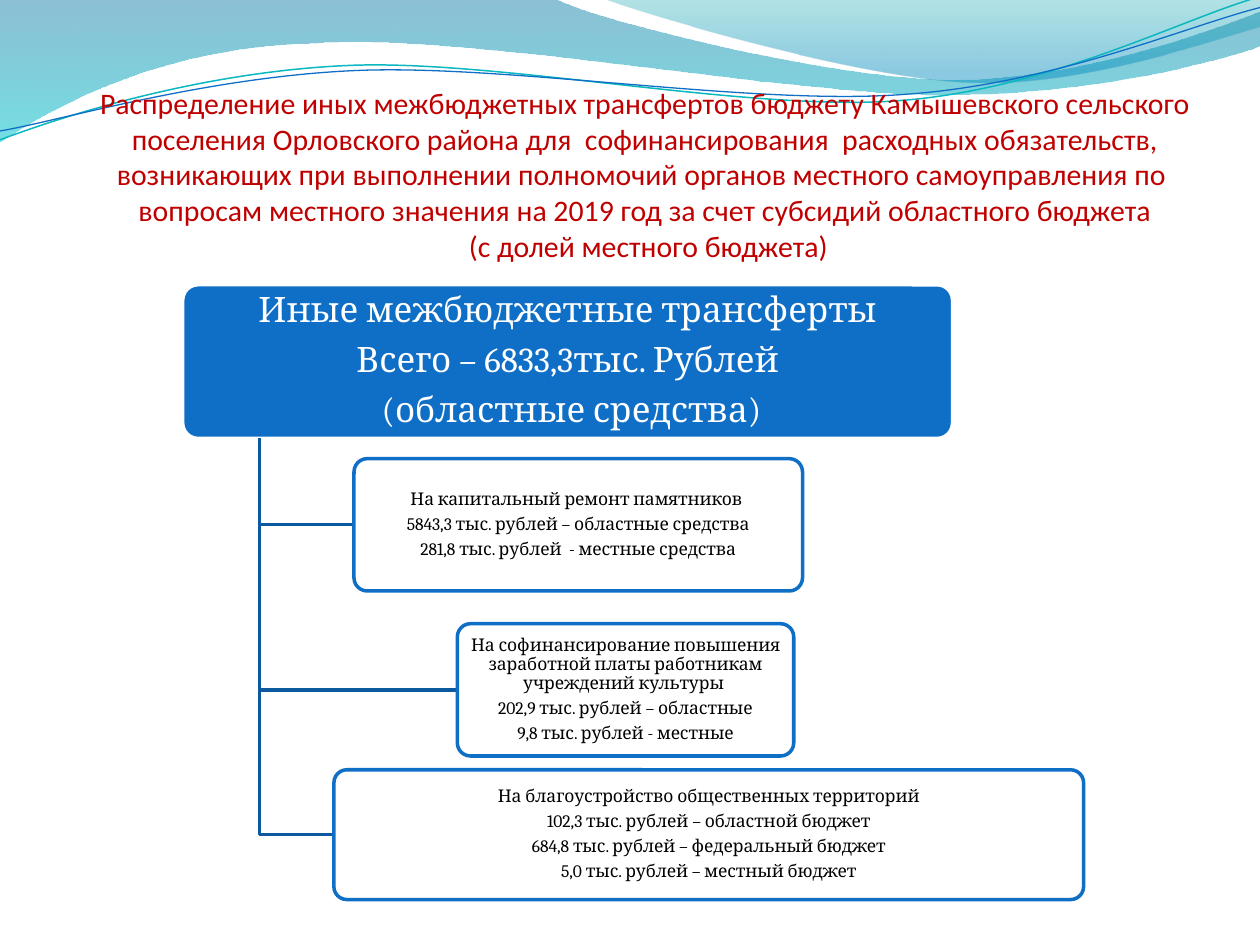
import pptx
import pptx.util
import pptx.dml.color
import pptx.enum.shapes
import pptx.enum.text
from lxml import etree
from pptx.oxml.ns import qn
from pptx.util import Inches, Pt

TITLE = (
    "Распределение иных межбюджетных трансфертов бюджету Камышевского сельского "
    "поселения Орловского района для  софинансирования  расходных обязательств, "
    "возникающих при выполнении полномочий органов местного самоуправления по \v"
    "вопросам местного значения на 2019 год за счет субсидий областного бюджета\v"
    " (с долей местного бюджета)"
)
TOTAL = ["Иные межбюджетные трансферты", "Всего – 6833,3тыс. Рублей", " (областные средства)"]
TOTAL_BOX = (1.45, 2.26, 6.11, 1.22)
TRUNK_X = 2.06

# Place (left, top, width, height) and lines of each expense
EXPENSES = [
    ((2.81, 3.64, 3.56, 1.05), [
        "На капитальный ремонт памятников ",
        "5843,3 тыс. рублей – областные средства",
        "281,8 тыс. рублей  - местные средства"]),
    ((3.63, 4.95, 2.67, 1.05), [
        "На софинансирование повышения заработной платы работникам учреждений культуры ",
        "202,9 тыс. рублей – областные",
        "9,8 тыс. рублей - местные"]),
    ((2.65, 6.11, 5.95, 1.03), [
        "На благоустройство общественных территорий",
        "102,3 тыс. рублей – областной бюджет",
        "684,8 тыс. рублей – федеральный бюджет",
        "5,0 тыс. рублей – местный бюджет"]),
]

# Outlines: two numbers are a straight step, six a Bezier step.
# Gradient stops: position, colour, opacity in percent.
WAVES = [
    ([(0, 0), (4.4, -0.01), (4.76, 0.17, 6.64, 0.63, 7.58, 0.63),
      (8.53, 0.63, 9.58, 0.26, 10, 0.09), (10.01, 0.36),
      (9.83, 0.44, 8.7, 0.76, 7.46, 0.75), (6.22, 0.75, 3.82, 0.28, 2.57, 0.34),
      (1.29, 0.36, 0.46, 0.83, -0.01, 1.13), (0, 0)],
     [(0, "0074A1", 45), (1, "00C6CF", 55)]),
    ([(4.79, -0.01), (5.09, 0.11, 6.82, 0.62, 7.69, 0.65),
      (8.56, 0.69, 9.61, 0.32, 10, 0.21), (10, 0), (4.79, -0.01)],
     [(0, "00A1A9", 30), (0.8, "008BBF", 45)]),
]
WAVE_LINES = [
    ([(0, 1.11), (0.48, 0.93, 1.58, 0.57, 2.77, 0.52),
      (3.95, 0.47, 5.93, 0.89, 7.13, 0.8), (8.33, 0.71, 9.38, 0.15, 9.98, -0.02)],
     "0AB8BF", 0.85),
    ([(0, 1.04), (0.47, 0.96, 1.64, 0.61, 2.83, 0.56),
      (4.03, 0.51, 5.97, 0.84, 7.17, 0.75), (8.36, 0.67, 9.41, 0.21, 10, 0.06)],
     "0F6FC6", 0.75),
]


def color(hex_text):
    return pptx.dml.color.RGBColor.from_string(hex_text)


def set_opacity(color_element, percent):
    etree.SubElement(color_element, qn("a:alpha")).set("val", str(percent * 1000))


def set_line(shape, hex_text, width):
    shape.line.color.rgb = color(hex_text)
    shape.line.width = Pt(width)


def add_outline(slide, outline, close):
    """Draw all points as straight steps, then join each Bezier triple into one curve."""
    points = [(Inches(step[i]), Inches(step[i + 1]))
              for step in outline for i in range(0, len(step), 2)]
    builder = slide.shapes.build_freeform(*points[0])
    builder.add_line_segments(points[1:], close=close)
    shape = builder.convert_to_shape()
    shape.shadow.inherit = False
    segments = iter(list(shape.element.spPr.iter(qn("a:lnTo"))))
    for step in outline[1:]:
        first = next(segments)
        if len(step) == 6:
            first.tag = qn("a:cubicBezTo")
            for _ in range(2):
                extra = next(segments)
                first.append(extra[0])
                extra.getparent().remove(extra)
    return shape


def add_wave(slide, outline, stops):
    shape = add_outline(slide, outline, True)
    shape.line.fill.background()
    shape.fill.gradient()
    shape.fill.gradient_angle = 270
    for stop, (position, hex_text, _) in zip(shape.fill.gradient_stops, stops):
        stop.color.rgb = color(hex_text)
        stop.position = position
    elements = list(shape.element.spPr.iter(qn("a:srgbClr")))
    for element, (_, _, opacity) in zip(elements, stops):
        set_opacity(element, opacity)


def add_open_line(slide, outline, hex_text, width):
    shape = add_outline(slide, outline, False)
    shape.fill.background()
    set_line(shape, hex_text, width)


def write(shape, lines, font, size, hex_text, insets, anchor):
    frame = shape.text_frame
    frame.word_wrap = True
    frame.vertical_anchor = anchor
    frame.margin_left, frame.margin_top, frame.margin_right, frame.margin_bottom = map(Inches, insets)
    frame.text = "\n".join(lines)
    for paragraph in frame.paragraphs:
        paragraph.alignment = pptx.enum.text.PP_ALIGN.CENTER
        for run in paragraph.runs:
            run.font.name = font
            run.font.size = Pt(size)
            run.font.color.rgb = color(hex_text)


def add_box(slide, place, lines, size, text_color, fill, line, insets):
    shape = slide.shapes.add_shape(
        pptx.enum.shapes.MSO_SHAPE.ROUNDED_RECTANGLE, *map(Inches, place))
    shape.adjustments[0] = 0.1
    shape.shadow.inherit = False
    shape.fill.solid()
    shape.fill.fore_color.rgb = color(fill)
    set_line(shape, line, 2)
    write(shape, lines, "Cambria", size, text_color, insets, pptx.enum.text.MSO_ANCHOR.MIDDLE)
    for paragraph in shape.text_frame.paragraphs:
        paragraph.line_spacing = 0.9
        paragraph.space_after = Pt(size * 0.35)
    return shape


def main():
    presentation = pptx.Presentation()
    presentation.slide_width, presentation.slide_height = Inches(10), Inches(7.5)
    slide = presentation.slides.add_slide(presentation.slide_layouts[6])

    for outline, stops in WAVES:
        add_wave(slide, outline, stops)
    for outline, hex_text, width in WAVE_LINES:
        add_open_line(slide, outline, hex_text, width)

    title = slide.shapes.add_textbox(*map(Inches, (0.62, 0.31, 9, 1.78)))
    write(title, [TITLE], "Calibri", 17, "C00000", (0, 0.04, 0, 0),
          pptx.enum.text.MSO_ANCHOR.BOTTOM)

    add_box(slide, TOTAL_BOX, TOTAL, 20, "FFFFFF", "0F6FC6", "FFFFFF", (0.04, 0.03, 0.04, 0.03))
    trunk_top = TOTAL_BOX[1] + TOTAL_BOX[3]
    for place, lines in EXPENSES:
        left, top, _, height = place
        middle = top + height / 2
        add_open_line(slide, [(TRUNK_X, trunk_top), (TRUNK_X, middle), (left, middle)],
                      "0C599F", 2)
        box = add_box(slide, place, lines, 10, "000000", "FFFFFF", "0F6FC6",
                      (0.02, 0.01, 0.02, 0.01))
        set_opacity(box.element.spPr.find(qn("a:solidFill")).find(qn("a:srgbClr")), 90)

    presentation.save("out.pptx")


if __name__ == "__main__":
    main()
